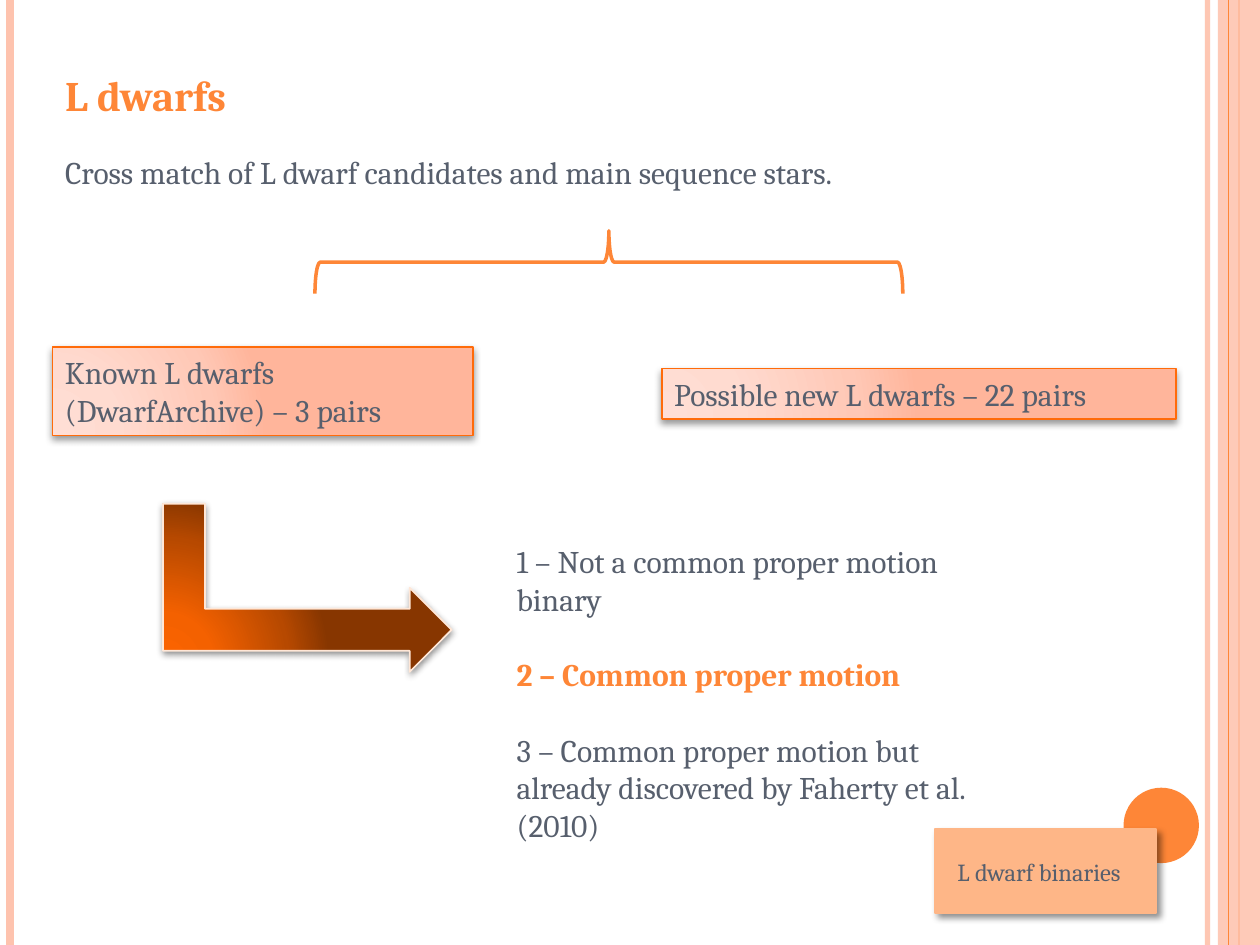
import pptx
import pptx.util
import pptx.oxml
import pptx.oxml.ns
import pptx.dml.color
import pptx.enum.shapes
import pptx.enum.text
from dataclasses import dataclass
from lxml import etree

Cm = pptx.util.Cm
Pt = pptx.util.Pt
SHAPE = pptx.enum.shapes.MSO_SHAPE
ANCHOR = pptx.enum.text.MSO_ANCHOR
qn = pptx.oxml.ns.qn


@dataclass(frozen=True)
class Theme:
    font: str = "Cambria"
    accent: str = "FE8637"
    band: str = "FEC3AE"
    text: str = "575F6D"
    label: str = "FEB687"
    card_line: str = "FF6B0A"
    arrow_line: str = "FFE7D7"
    shadow: str = "000000"
    card_stops: tuple = ((0, "FFDED5"), (30, "FFDBD0"), (75, "FFC8B6"), (100, "FFB59B"))
    arrow_stops: tuple = ((0, "FD6400"), (30, "F46100"), (75, "B74900"), (100, "873600"))
    title_size: int = 24
    body_size: int = 18
    label_size: int = 14


def rgb(value):
    return pptx.dml.color.RGBColor.from_string(value)


def set_alpha(sp, percent):
    for color in sp._element.xpath("./p:spPr//a:solidFill/a:srgbClr"):
        etree.SubElement(color, qn("a:alpha"), val=str(percent * 1000))


class SlideBuilder:
    def __init__(self, slide, theme):
        self.s = slide
        self.theme = theme

    def add_text(self, sp, paragraphs, size, gap=0, anchor=ANCHOR.TOP):
        tf = sp.text_frame
        tf.word_wrap = True
        tf.auto_size = pptx.enum.text.MSO_AUTO_SIZE.NONE
        tf.vertical_anchor = anchor
        for i, (text, color, bold) in enumerate(paragraphs):
            p = tf.add_paragraph() if i else tf.paragraphs[0]
            p.alignment = pptx.enum.text.PP_ALIGN.LEFT
            p.space_before = Pt(gap if i else 0)
            r = p.add_run()
            r.text = text
            r.font.name = self.theme.font
            r.font.size = Pt(size)
            r.font.bold = bold
            r.font.color.rgb = rgb(color)

    def placeholder(self, idx, box, paragraphs, size, gap=0):
        sp = self.s.placeholders[idx]
        sp.left, sp.top, sp.width, sp.height = map(Cm, box)
        self.add_text(sp, paragraphs, size, gap)
        for p in sp.text_frame.paragraphs:
            pPr = p._p.get_or_add_pPr()
            pPr.set("marL", "0")
            pPr.set("indent", "0")
            etree.SubElement(pPr, qn("a:buNone"))

    def textbox(self, box, text, size):
        sp = self.s.shapes.add_textbox(*map(Cm, box))
        self.add_text(sp, [(text, self.theme.text, False)], size)

    def rule(self, x, color, width, alpha=100):
        sp = self.s.shapes.add_connector(
            pptx.enum.shapes.MSO_CONNECTOR.STRAIGHT, Cm(x), Cm(0), Cm(x), Cm(19.05))
        sp.line.color.rgb = rgb(color)
        sp.line.width = Pt(width)
        etree.SubElement(sp._element.spPr, qn("a:effectLst"))
        if alpha < 100:
            set_alpha(sp, alpha)

    def shape(self, kind, box, fill=None, line=None, width=1, rotation=0, alpha=100):
        sp = self.s.shapes.add_shape(kind, *map(Cm, box))
        sp.rotation = rotation
        sp.shadow.inherit = False
        if fill:
            sp.fill.solid()
            sp.fill.fore_color.rgb = rgb(fill)
        else:
            sp.fill.background()
        if alpha < 100:
            set_alpha(sp, alpha)
        if line:
            sp.line.color.rgb = rgb(line)
            sp.line.width = Pt(width)
        else:
            sp.line.fill.background()
        return sp

    def shade(self, sp, stops):
        sp.fill.gradient()
        old = sp._element.spPr.find(qn("a:gradFill"))
        stop_xml = "".join(
            f'<a:gs pos="{pos * 1000}"><a:srgbClr val="{color}"/></a:gs>' for pos, color in stops)
        old.getparent().replace(old, pptx.oxml.parse_xml(
            f'<a:gradFill {pptx.oxml.ns.nsdecls("a")} rotWithShape="1">'
            f'<a:gsLst>{stop_xml}</a:gsLst><a:path path="circle">'
            '<a:fillToRect l="5000" t="100000" r="120000" b="10000"/></a:path></a:gradFill>'))

    def drop_shadow(self, sp, alpha, distance, angle):
        effects = sp._element.spPr.find(qn("a:effectLst"))
        shadow = etree.SubElement(
            effects, qn("a:outerShdw"), blurRad=str(Pt(4)), dist=str(Pt(distance)),
            dir=str(angle * 60000), algn="ctr", rotWithShape="0")
        color = etree.SubElement(shadow, qn("a:srgbClr"), val=self.theme.shadow)
        etree.SubElement(color, qn("a:alpha"), val=str(alpha * 1000))

    def card(self, box, text):
        sp = self.shape(SHAPE.RECTANGLE, box, line=self.theme.card_line)
        self.shade(sp, self.theme.card_stops)
        self.drop_shadow(sp, 40, 2, 90)
        self.add_text(sp, [(text, self.theme.text, False)], self.theme.body_size,
                      anchor=ANCHOR.MIDDLE)

    def bent_arrow(self, box):
        sp = self.shape(SHAPE.BENT_UP_ARROW, box, line=self.theme.arrow_line, rotation=90)
        self.shade(sp, self.theme.arrow_stops)
        self.drop_shadow(sp, 42, 1.6, 90)


def main():
    prs = pptx.Presentation()
    prs.slide_width, prs.slide_height = Cm(25.4), Cm(19.05)
    theme = Theme()
    slide = SlideBuilder(prs.slides.add_slide(prs.slide_layouts[3]), theme)

    slide.rule(24.34, theme.band, 3, alpha=93)
    slide.rule(0.21, theme.band, 4.5)
    slide.rule(24.98, theme.accent, 1.5)
    slide.shape(SHAPE.RECTANGLE, (24.55, 0, 0.85, 19.05), theme.band, alpha=87)
    slide.rule(24.77, theme.accent, 0.75)
    slide.shape(SHAPE.OVAL, (22.65, 15.88, 1.52, 1.52), theme.accent)

    slide.placeholder(0, (1.06, 1.27, 20.75, 2.82),
                      [("L dwarfs", theme.accent, True)], theme.title_size)
    slide.placeholder(1, (1.06, 2.96, 22.44, 1.02),
                      [("Cross match of L dwarf candidates and main sequence stars.",
                        theme.text, False)], theme.body_size)

    label = slide.shape(SHAPE.RECTANGLE, (18.85, 16.72, 4.45, 1.69), theme.label, theme.label)
    slide.drop_shadow(label, 43, 3, 45)
    slide.textbox((19.05, 17.15, 4.45, 0.86), "L dwarf binaries", theme.label_size)

    slide.shape(SHAPE.RIGHT_BRACE, (11.64, -0.64, 1.27, 11.85),
                line=theme.accent, width=2, rotation=270)
    slide.card((1.06, 6.99, 8.47, 1.79), "Known L dwarfs (DwarfArchive) – 3 pairs")
    slide.card((13.34, 7.43, 10.37, 1.02), "Possible new L dwarfs – 22 pairs")

    slide.placeholder(2, (10.16, 10.8, 10.58, 6.4), [
        ("1 – Not a common proper motion binary", theme.text, False),
        ("2 – Common proper motion", theme.accent, True),
        ("3 – Common proper motion but already discovered by Faherty et al. (2010)",
         theme.text, False),
    ], theme.body_size, gap=21.5)
    slide.bent_arrow((4.5, 8.94, 3.39, 5.82))

    prs.save("out.pptx")


if __name__ == "__main__":
    main()
